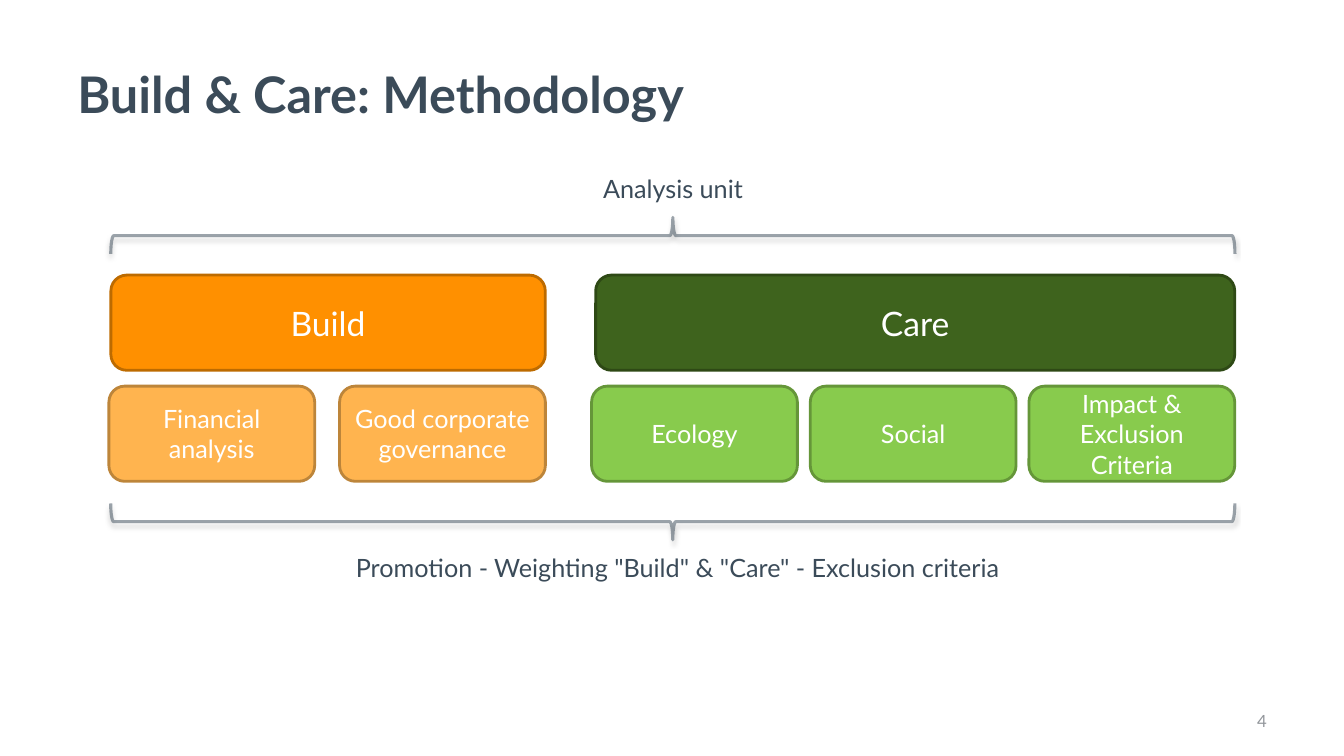
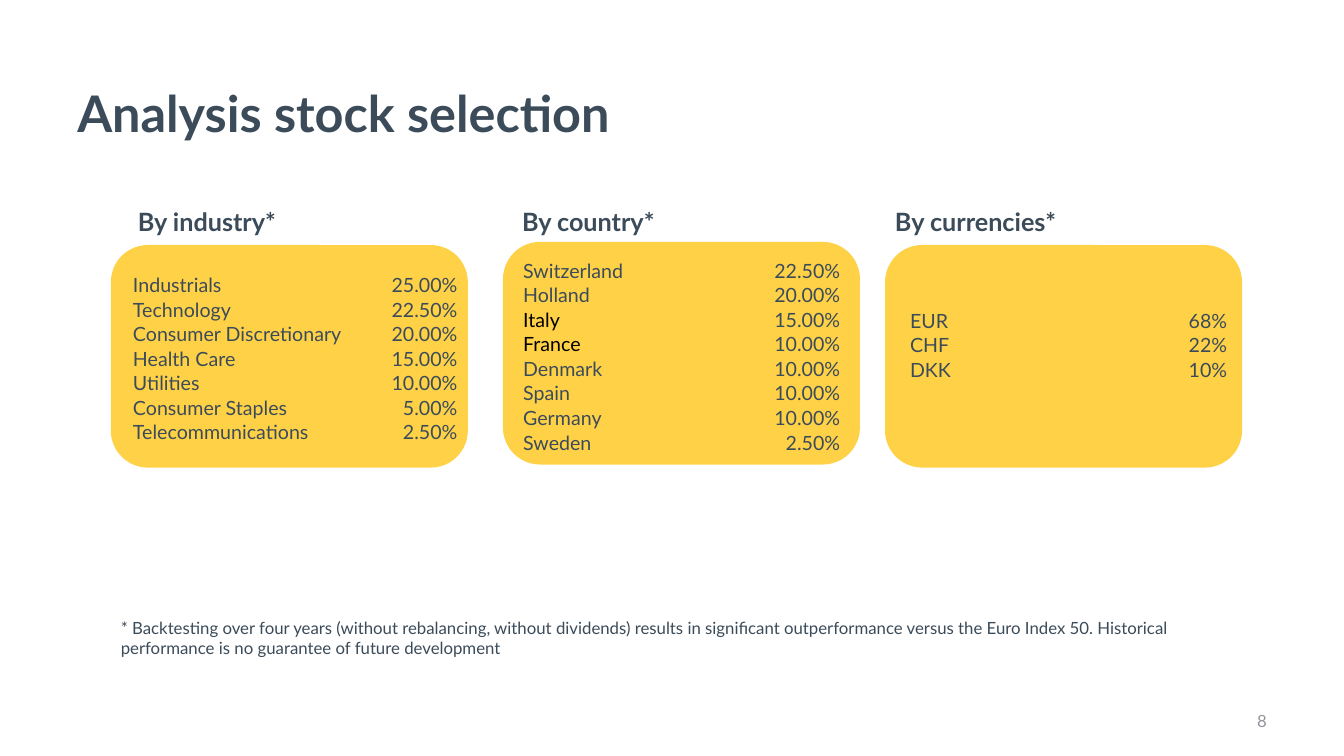
from lxml import etree
from pptx import Presentation
from pptx.dml.color import RGBColor as Rgb
from pptx.enum.shapes import MSO_SHAPE as Kind
from pptx.enum.text import MSO_ANCHOR as Anchor, MSO_AUTO_SIZE as Fit, PP_ALIGN as Align
from pptx.oxml.ns import qn
from pptx.util import Pt

HUES = {
    "ink": "3B4B59", "gray": "92969B", "white": "FFFFFF", "black": "000000",
    "orange": "FF9000", "rust": "BD6B00", "peach": "FFB44F", "tan": "BD853A",
    "forest": "3E631D", "pine": "2E4915", "lime": "88CB4D", "moss": "659639",
    "gold": "FFD147",
}
HUES = {name: Rgb.from_string(code) for name, code in HUES.items()}
PLAIN = "{2D5ABB26-0587-4C30-8999-92F81FD0307C}"  # table style without grid

deck = Presentation()
deck.slide_width, deck.slide_height = Pt(960), Pt(540)


def write(frame, text, size, hue="ink", bold=False, align=Align.LEFT):
    frame.word_wrap = True
    frame.text = text
    para = frame.paragraphs[0]
    para.alignment = align
    font = para.runs[0].font
    for key, val in {"name": "Lato", "size": Pt(size), "bold": bold}.items():
        setattr(font, key, val)
    font.color.rgb = HUES[hue]


def draw(slide, kind, box, fill=None, line=None, width=2):
    shape = slide.shapes.add_shape(kind, *map(Pt, box))
    shape.shadow.inherit = False
    if fill:
        shape.fill.solid()
        shape.fill.fore_color.rgb = HUES[fill]
    else:
        shape.fill.background()
    if line:
        shape.line.color.rgb = HUES[line]
        shape.line.width = Pt(width)
    else:
        shape.line.fill.background()
    return shape


# Titles and page numbers
slides = []
for text, top, page in [("Build & Care: Methodology", 21.6, "4"),
                        ("Analysis stock selection", 35.3, "8")]:
    slide = deck.slides.add_slide(deck.slide_layouts[5])
    title = slide.shapes.title
    spot = {"left": 48, "top": top, "width": 864, "height": 90}
    for key, val in spot.items():
        setattr(title, key, Pt(val))
    write(title.text_frame, text, 36, bold=True)
    title.text_frame.auto_size = Fit.NONE
    title.text_frame.vertical_anchor = Anchor.MIDDLE
    foot = slide.shapes.add_textbox(Pt(688), Pt(500.5), Pt(224), Pt(28.75))
    write(foot.text_frame, page, 12, "gray", align=Align.RIGHT)
    foot.text_frame.vertical_anchor = Anchor.MIDDLE
    slides.append(slide)
method, picks = slides

# Methodology: pillars and their parts
TALL, PART = 68, 147
blocks = [("Build", 79.2, 196.5, 310.3, 24, "orange", "rust"),
          ("Care", 425.5, 196.5, 456.5, 24, "forest", "pine")]
for names, left, step, fill, line in [
    (["Financial analysis", "Good corporate governance"], 77.8, 164.8, "peach", "tan"),
    (["Ecology", "Social", "Impact & Exclusion Criteria"], 422.6, 156.2, "lime", "moss"),
]:
    for i, name in enumerate(names):
        blocks.append((name, left + i * step, 275.8, PART, 18, fill, line))
for name, left, top, width, size, fill, line in blocks:
    block = draw(method, Kind.ROUNDED_RECTANGLE, (left, top, width, TALL), fill, line)
    write(block.text_frame, name, size, "white", align=Align.CENTER)
    block.text_frame.vertical_anchor = Anchor.MIDDLE

# Methodology: braces with soft shadow, and their labels
for top, turn in [(-233.2, 90), (-28.9, 270)]:
    brace = draw(method, Kind.LEFT_BRACE, (467.6, top, 26, 803), line="ink", width=2.25)
    brace.rotation = turn
    props = brace._element.spPr
    tint = props.find(qn("a:ln")).find(".//" + qn("a:srgbClr"))
    etree.SubElement(tint, qn("a:alpha"), val="50000")
    glow = etree.SubElement(props.find(qn("a:effectLst")), qn("a:outerShdw"),
                            blurRad=str(Pt(3.1)), dist=str(Pt(1.8)),
                            dir="5400000", rotWithShape="0")
    shade = etree.SubElement(glow, qn("a:srgbClr"), val="000000")
    etree.SubElement(shade, qn("a:alpha"), val="35000")
for text, left, top, width in [
    ("Analysis unit", 375.8, 120.2, 210),
    ('Promotion - Weighting "Build" & "Care" - Exclusion criteria ', 158.4, 391, 656),
]:
    label = method.shapes.add_textbox(Pt(left), Pt(top), Pt(width), Pt(29))
    write(label.text_frame, text, 18, align=Align.CENTER)

# Stock selection: one card with heading and table per split
ROW = 17.2
cards = [
    ("By industry*", 91.4, (79.2, 175), (94.3, 194.4), (174.2, 59),
     [("Industrials", "25.00%"), ("Technology", "22.50%"),
      ("Consumer Discretionary", "20.00%"), ("Health Care", "15.00%"),
      ("Utilities", "10.00%"), ("Consumer Staples", "5.00%"),
      ("Telecommunications", "2.50%")]),
    ("By country*", 365.8, (359.3, 172.8), (373, 184.3), (132.7, 95.2),
     [("Switzerland", "22.50%"), ("Holland", "20.00%"), ("Italy", "15.00%"),
      ("France", "10.00%"), ("Denmark", "10.00%"), ("Spain", "10.00%"),
      ("Germany", "10.00%"), ("Sweden", "2.50%")]),
    ("By currencies*", 632.2, (632.2, 175), (649.4, 219.8), (132.7, 95.2),
     [("EUR", "68%"), ("CHF", "22%"), ("DKK", "10%")]),
]
for head, left, card, spot, cols, rows in cards:
    draw(picks, Kind.ROUNDED_RECTANGLE, (*card, 255, 159), "gold")
    label = picks.shapes.add_textbox(Pt(left), Pt(144), Pt(210), Pt(29))
    write(label.text_frame, head, 18, bold=True)
    box = (*spot, sum(cols), ROW * len(rows))
    table = picks.shapes.add_table(len(rows), 2, *map(Pt, box)).table
    table.first_row = table.horz_banding = False
    table._tbl.tblPr.find(qn("a:tableStyleId")).text = PLAIN
    for col, width in zip(table.columns, cols):
        col.width = Pt(width)
    for r, row in enumerate(rows):
        table.rows[r].height = Pt(ROW)
        for c, text in enumerate(row):
            cell = table.cell(r, c)
            cell.fill.background()
            inset = {"margin_left": Pt(0.7), "margin_right": Pt(0.7),
                     "margin_top": Pt(0.7), "margin_bottom": 0,
                     "vertical_anchor": Anchor.BOTTOM}
            for key, val in inset.items():
                setattr(cell, key, val)
            hue = "black" if text in ("Italy", "France") else "ink"
            write(cell.text_frame, text, 14, hue, align=Align.RIGHT if c else Align.LEFT)

# Stock selection: footnote
note = picks.shapes.add_textbox(Pt(79.2), Pt(437.8), Pt(808), Pt(36))
write(note.text_frame,
      "* Backtesting over four years (without rebalancing, without dividends) results in "
      "significant outperformance versus the Euro Index 50. Historical performance is no "
      "guarantee of future development", 12)

deck.save("out.pptx")
